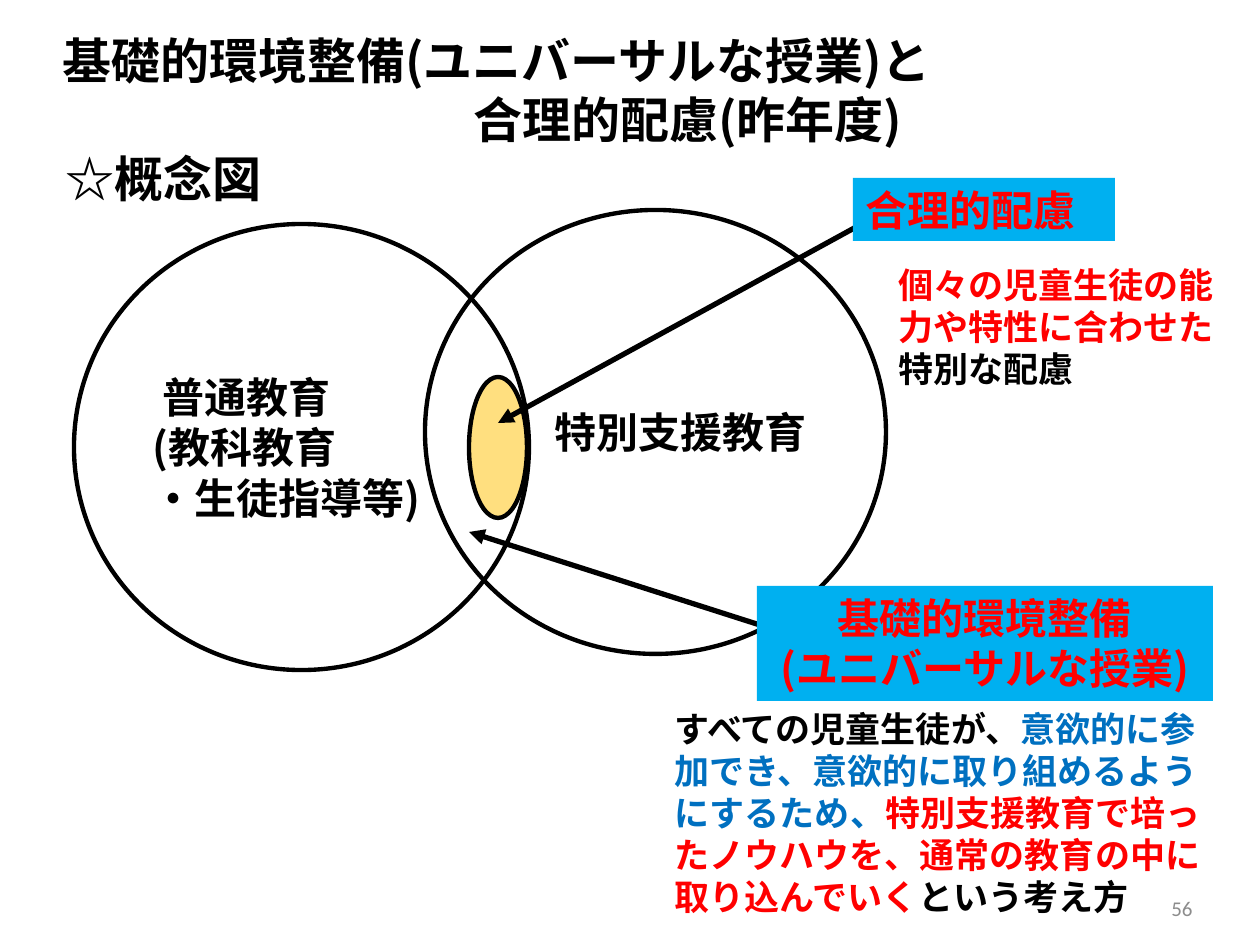
from dataclasses import dataclass
from typing import NamedTuple, Optional

from pptx import Presentation
from pptx.dml.color import RGBColor
from pptx.enum.shapes import MSO_CONNECTOR as Connector, MSO_SHAPE as Preset
from pptx.enum.text import MSO_ANCHOR as Anchor, MSO_AUTO_SIZE as AutoSize, PP_ALIGN as Align
from pptx.oxml.ns import qn
from pptx.util import Emu, Pt

EMU_PER_PX = 914400 / 126


@dataclass(frozen=True)
class Theme:
    font: str = "Noto Sans CJK JP"
    number_font: str = "Calibri"
    black: str = "000000"
    red: str = "FF0000"
    blue: str = "0070C0"
    gray: str = "8C8C8C"
    label_fill: str = "00B0F0"
    overlap_fill: str = "FFC000"
    title_size: int = 28
    label_size: int = 24
    body_size: int = 20
    number_size: int = 12
    outline: float = 2.5
    arrow: float = 3


THEME = Theme()


class Box(NamedTuple):
    left: int
    top: int
    width: int
    height: int


class Span(NamedTuple):
    text: str
    color: str = THEME.black


Lines = list[list[Span]]


@dataclass(frozen=True)
class Oval:
    box: Box
    lines: Lines
    align: Align = Align.LEFT
    fill: Optional[str] = None


@dataclass(frozen=True)
class Callout:
    """A filled label, its explanation below, and an arrow into the diagram."""
    label_box: Box
    label_lines: Lines
    label_align: Align
    note_box: Box
    note: list[Span]
    arrow_from: tuple[int, int]
    arrow_to: tuple[int, int]


def px(value: float) -> Emu:
    return Emu(round(value * EMU_PER_PX))


def emu_box(box: Box) -> list[Emu]:
    return [px(value) for value in box]


def lines_of(*texts: str, color: str = THEME.black) -> Lines:
    return [[Span(text, color)] for text in texts]


def write(shape, lines: Lines, size: int, align: Align = Align.LEFT,
          anchor: Anchor = Anchor.TOP, font: str = THEME.font, bold: bool = True) -> None:
    frame = shape.text_frame
    frame.word_wrap = True
    frame.auto_size = AutoSize.NONE
    frame.vertical_anchor = anchor
    for index, spans in enumerate(lines):
        paragraph = frame.add_paragraph() if index else frame.paragraphs[0]
        paragraph.alignment = align
        paragraph.font.size = Pt(size)
        paragraph.font.bold = bold
        paragraph.font.name = font
        properties = paragraph.font._element
        properties.find(qn("a:latin")).addnext(
            properties.makeelement(qn("a:ea"), {"typeface": font}))
        for span in spans:
            run = paragraph.add_run()
            run.text = span.text
            run.font.color.rgb = RGBColor.from_string(span.color)


def add_text(slide, box: Box, lines: Lines, size: int, **style) -> None:
    write(slide.shapes.add_textbox(*emu_box(box)), lines, size, **style)


def add_oval(slide, oval: Oval) -> None:
    shape = slide.shapes.add_shape(Preset.OVAL, *emu_box(oval.box))
    shape.shadow.inherit = False
    shape.line.color.rgb = RGBColor.from_string(THEME.black)
    shape.line.width = Pt(THEME.outline)
    if oval.fill:
        shape.fill.solid()
        shape.fill.fore_color.rgb = RGBColor.from_string(oval.fill)
        color = shape._element.spPr.find(qn("a:solidFill"))[0]
        color.append(color.makeelement(qn("a:alpha"), {"val": "50000"}))
    else:
        shape.fill.background()
    if oval.lines:
        write(shape, oval.lines, THEME.label_size, oval.align, Anchor.MIDDLE)


def add_arrow(slide, start: tuple[int, int], end: tuple[int, int]) -> None:
    points = [px(value) for value in start + end]
    connector = slide.shapes.add_connector(Connector.STRAIGHT, *points)
    connector.line.color.rgb = RGBColor.from_string(THEME.black)
    connector.line.width = Pt(THEME.arrow)
    line = connector.line._get_or_add_ln()
    line.append(line.makeelement(qn("a:tailEnd"), {"type": "triangle"}))
    properties = connector._element.spPr
    properties.append(properties.makeelement(qn("a:effectLst"), {}))


def add_callout(slide, callout: Callout) -> None:
    add_arrow(slide, callout.arrow_from, callout.arrow_to)
    label = slide.shapes.add_shape(Preset.RECTANGLE, *emu_box(callout.label_box))
    label.shadow.inherit = False
    label.fill.solid()
    label.fill.fore_color.rgb = RGBColor.from_string(THEME.label_fill)
    label.line.fill.background()
    write(label, callout.label_lines, THEME.label_size, callout.label_align)
    add_text(slide, callout.note_box, [callout.note], THEME.body_size)


def set_title(slide, box: Box, lines: Lines, second_line_indent: int) -> None:
    title = slide.shapes.title
    title.left, title.top, title.width, title.height = emu_box(box)
    write(title, lines, THEME.title_size)
    second = title.text_frame.paragraphs[1]._p.get_or_add_pPr()
    second.set("marL", str(px(second_line_indent)))


OVALS = [
    Oval(Box(74, 224, 455, 446), lines_of(" 普通教育", "(教科教育", "・生徒指導等)")),
    Oval(Box(425, 210, 461, 444), lines_of("特別支援教育"), Align.RIGHT),
    Oval(Box(469, 377, 58, 141), [], fill=THEME.overlap_fill),
]

CALLOUTS = [
    Callout(
        Box(757, 586, 456, 115),
        lines_of("基礎的環境整備", "(ユニバーサルな授業)", color=THEME.red), Align.CENTER,
        Box(662, 701, 576, 224),
        [Span("すべての児童生徒が、"),
         Span("意欲的に参加でき、意欲的に取り組めるようにするため、", THEME.blue),
         Span("特別支援教育で培ったノウハウを、通常の教育の中に取り込んでいく", THEME.red),
         Span("という考え方")],
        (788, 634), (469, 532)),
    Callout(
        Box(853, 178, 262, 63), lines_of("合理的配慮", color=THEME.red), Align.LEFT,
        Box(886, 257, 352, 140),
        [Span("個々の児童生徒の能力や特性に合わせた", THEME.red), Span("特別な配慮")],
        (858, 226), (498, 423)),
]


def main() -> None:
    presentation = Presentation()
    presentation.slide_width, presentation.slide_height = px(1260), px(945)
    slide = presentation.slides.add_slide(presentation.slide_layouts[5])
    set_title(slide, Box(50, 24, 1135, 131),
              lines_of("基礎的環境整備(ユニバーサルな授業)と", "合理的配慮(昨年度)"), 411)
    for oval in OVALS:
        add_oval(slide, oval)
    add_text(slide, Box(53, 142, 224, 72), lines_of("☆概念図"), THEME.title_size)
    for callout in CALLOUTS:
        add_callout(slide, callout)
    add_text(slide, Box(886, 883, 319, 50), lines_of("56", color=THEME.gray),
             THEME.number_size, align=Align.RIGHT, anchor=Anchor.MIDDLE,
             font=THEME.number_font, bold=False)
    presentation.save("out.pptx")


if __name__ == "__main__":
    main()
